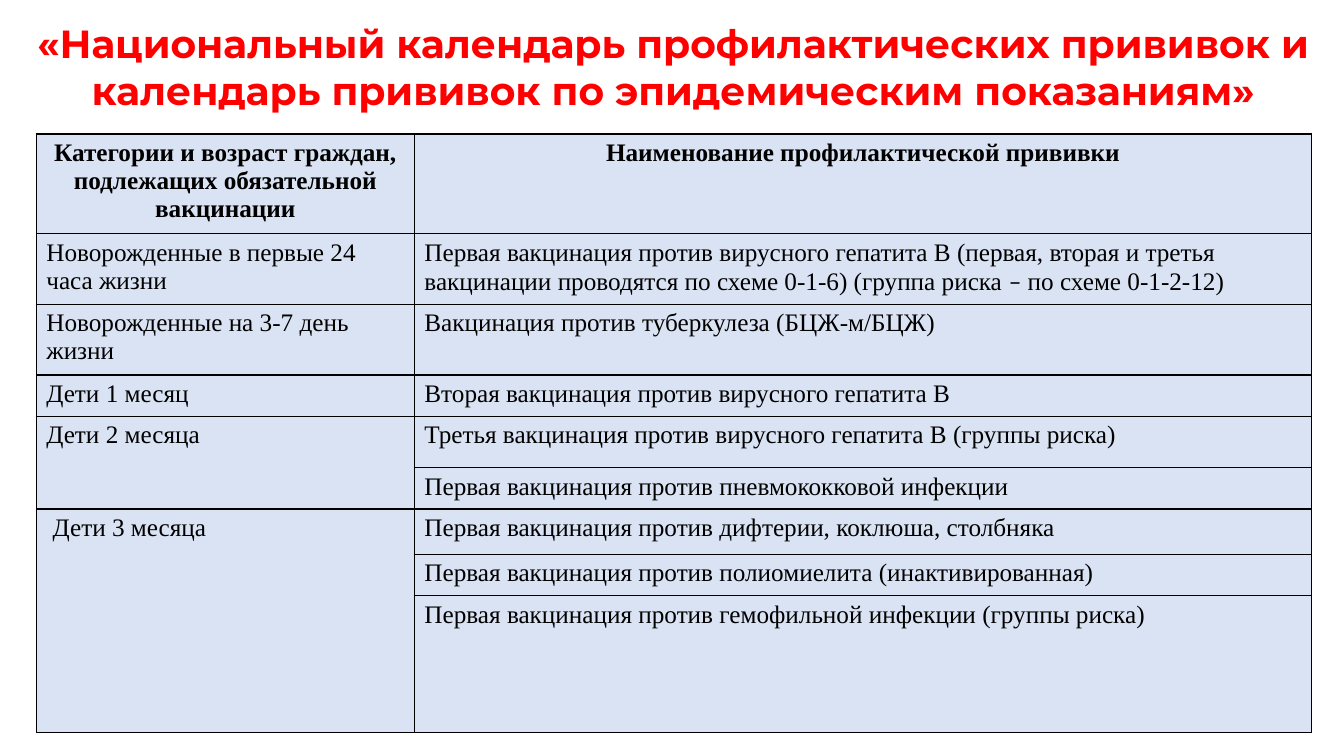
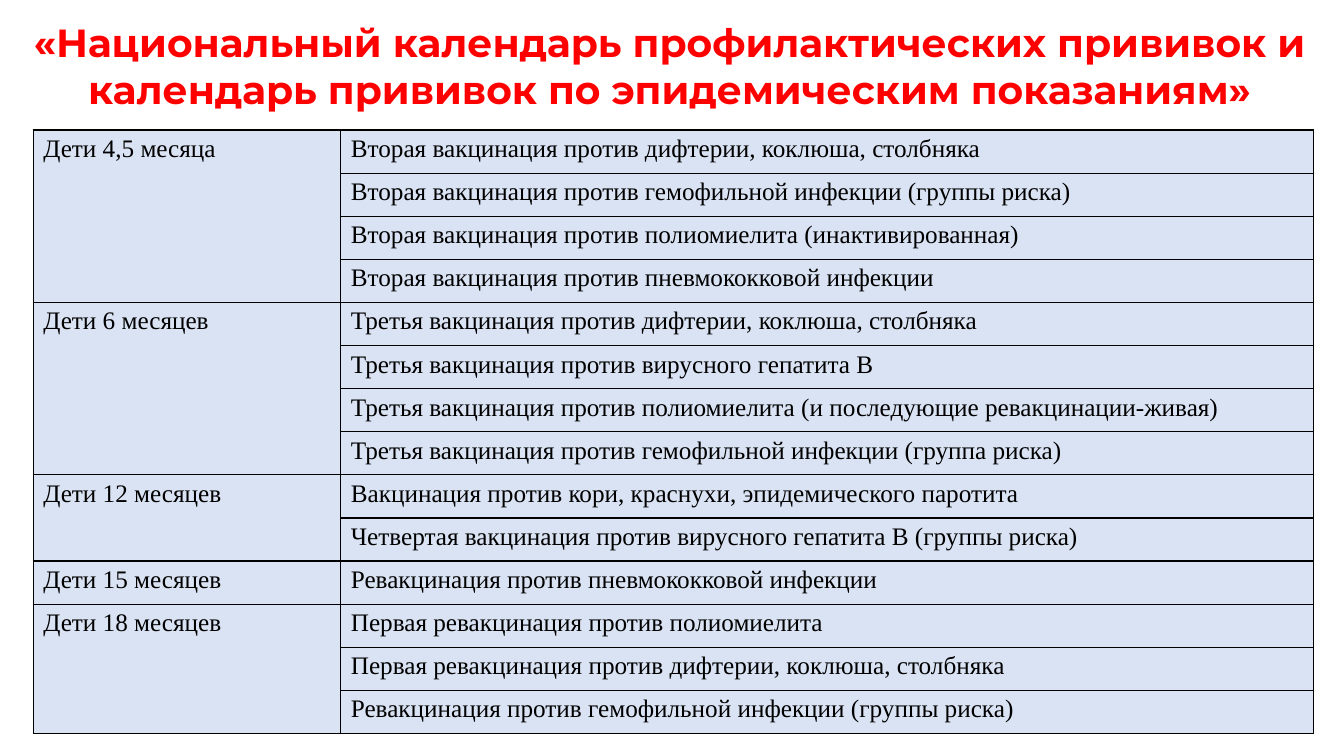
from dataclasses import dataclass

from lxml import etree
from pptx import Presentation
from pptx.dml.color import RGBColor
from pptx.enum import text
from pptx.oxml import ns
from pptx.util import Inches, Pt


@dataclass(frozen=True)
class Theme:
    title_color: RGBColor = RGBColor(0xFF, 0x00, 0x00)
    text_color: RGBColor = RGBColor(0x00, 0x00, 0x00)
    cell_fill: RGBColor = RGBColor(0xDA, 0xE3, 0xF3)
    title_font: str = "Montserrat"
    body_font: str = "Times New Roman"
    dash_font: str = "Calibri"
    title_size: int = 28
    body_size: int = 18
    border_width: int = 1


theme = Theme()

TITLE = ("«Национальный календарь профилактических прививок и "
         "календарь прививок по эпидемическим показаниям»")

slides = [
    dict(
        title_box=(0.14, 0.14, 13.07, 1.04),
        table_at=(0.36, 1.33),
        cols=[3.75, 8.9],
        rows=[0.99, 0.7, 0.7, 0.41, 0.51, 0.41, 0.45, 0.41, 1.36],
        header=True,
        groups=[
            ("Категории и возраст граждан, подлежащих обязательной вакцинации",
             ["Наименование профилактической прививки"]),
            ("Новорожденные в первые 24 часа жизни",
             ["Первая вакцинация против вирусного гепатита В (первая, вторая и "
              "третья вакцинации проводятся по схеме 0-1-6) (группа риска – "
              "по схеме 0-1-2-12)"]),
            ("Новорожденные на 3-7 день жизни",
             ["Вакцинация против туберкулеза (БЦЖ-м/БЦЖ)"]),
            ("Дети 1 месяц",
             ["Вторая вакцинация против вирусного гепатита В"]),
            ("Дети 2 месяца",
             ["Третья вакцинация против вирусного гепатита В (группы риска)",
              "Первая вакцинация против пневмококковой инфекции"]),
            (" Дети 3 месяца",
             ["Первая вакцинация против дифтерии, коклюша, столбняка",
              "Первая вакцинация против полиомиелита (инактивированная)",
              "Первая вакцинация против гемофильной инфекции (группы риска)"]),
        ],
    ),
    dict(
        title_box=(0.16, 0.13, 12.96, 1.04),
        table_at=(0.33, 1.29),
        cols=[3.05, 9.65],
        rows=[5.99 / 14] * 14,
        header=False,
        groups=[
            ("Дети 4,5 месяца",
             ["Вторая вакцинация против дифтерии, коклюша, столбняка",
              "Вторая вакцинация против гемофильной инфекции (группы риска)",
              "Вторая вакцинация против полиомиелита (инактивированная)",
              "Вторая вакцинация против пневмококковой инфекции"]),
            ("Дети 6 месяцев",
             ["Третья вакцинация против дифтерии, коклюша, столбняка",
              "Третья вакцинация против вирусного гепатита В",
              "Третья вакцинация против полиомиелита (и последующие ревакцинации-живая)",
              "Третья вакцинация против гемофильной инфекции (группа риска)"]),
            ("Дети 12 месяцев",
             ["Вакцинация против кори, краснухи, эпидемического паротита",
              "Четвертая вакцинация против вирусного гепатита В (группы риска)"]),
            ("Дети 15 месяцев",
             ["Ревакцинация против пневмококковой инфекции"]),
            ("Дети 18 месяцев",
             ["Первая ревакцинация против полиомиелита",
              "Первая ревакцинация против дифтерии, коклюша, столбняка",
              "Ревакцинация против гемофильной инфекции (группы риска)"]),
        ],
    ),
]


def style_run(r, font, size, color, bold):
    r.font.name = font
    r.font.size = Pt(size)
    r.font.color.rgb = color
    r.font.bold = bold


def style_cell(cell, bold):
    cell.fill.solid()
    cell.fill.fore_color.rgb = theme.cell_fill
    cell.margin_left = cell.margin_right = Inches(0.1)
    cell.margin_top = cell.margin_bottom = Inches(0.05)
    tcPr = cell._tc.get_or_add_tcPr()
    for i, side in enumerate(("lnL", "lnR", "lnT", "lnB")):
        ln = etree.Element(ns.qn(f"a:{side}"), w=str(Pt(theme.border_width)))
        fill = etree.SubElement(ln, ns.qn("a:solidFill"))
        etree.SubElement(fill, ns.qn("a:srgbClr"), val=str(theme.text_color))
        tcPr.insert(i, ln)
    p = cell.text_frame.paragraphs[0]
    p.alignment = text.PP_ALIGN.CENTER if bold else text.PP_ALIGN.LEFT
    parts = p.text.partition("–")
    p.clear()
    for part in filter(None, parts):
        r = p.add_run()
        r.text = part
        font = theme.dash_font if part == "–" else theme.body_font
        style_run(r, font, theme.body_size, theme.text_color, bold)


prs = Presentation()
prs.slide_width = Inches(13.33)
prs.slide_height = Inches(7.5)

for data in slides:
    s = prs.slides.add_slide(prs.slide_layouts[5])
    title = s.shapes.title
    title.left, title.top, title.width, title.height = map(Inches, data["title_box"])
    tf = title.text_frame
    tf.text = TITLE
    tf.word_wrap = True
    tf.auto_size = text.MSO_AUTO_SIZE.NONE
    tf.vertical_anchor = text.MSO_ANCHOR.TOP
    p = tf.paragraphs[0]
    p.alignment = text.PP_ALIGN.CENTER
    style_run(p.runs[0], theme.title_font, theme.title_size, theme.title_color, True)

    cols, rows = data["cols"], data["rows"]
    left, top = map(Inches, data["table_at"])
    table = s.shapes.add_table(len(rows), len(cols), left, top,
                               Inches(sum(cols)), Inches(sum(rows))).table
    table.first_row = table.horz_banding = False
    for col, width in zip(table.columns, cols):
        col.width = Inches(width)
    for row, height in zip(table.rows, rows):
        row.height = Inches(height)

    first = 0
    for age, vaccines in data["groups"]:
        last = first + len(vaccines) - 1
        table.cell(first, 0).text_frame.text = age
        for i, vaccine in enumerate(vaccines, first):
            table.cell(i, 1).text_frame.text = vaccine
        if last > first:
            table.cell(first, 0).merge(table.cell(last, 0))
        first = last + 1

    for i, row in enumerate(table.rows):
        for cell in row.cells:
            style_cell(cell, bold=data["header"] and i == 0)

prs.save("out.pptx")
